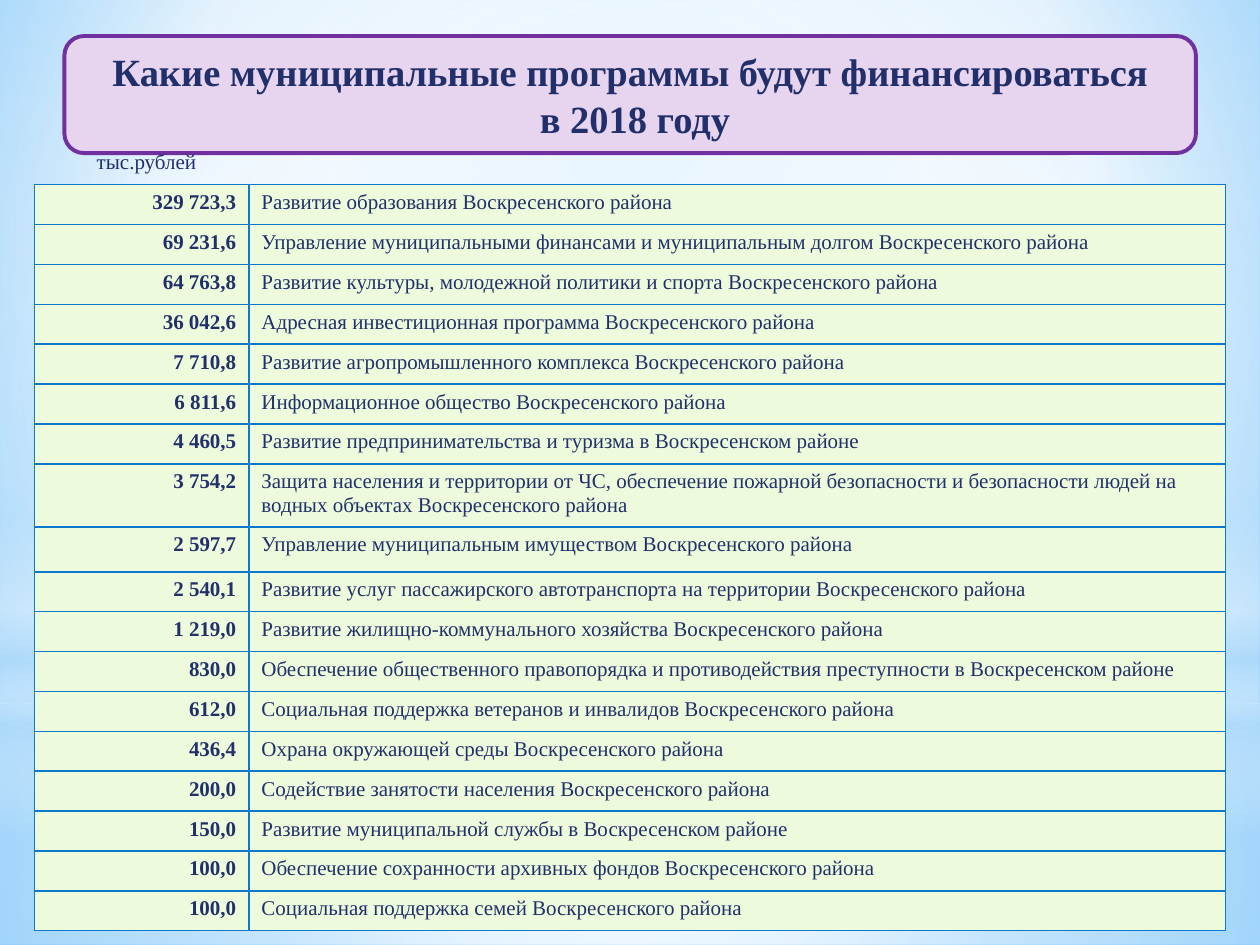
from lxml.etree import SubElement
from pptx import Presentation
from pptx.dml.color import RGBColor
from pptx.enum.shapes import MSO_SHAPE
from pptx.enum.text import MSO_ANCHOR, PP_ALIGN
from pptx.oxml.ns import qn
from pptx.util import Pt

NAVY = RGBColor(0x21, 0x30, 0x6A)
PURPLE = RGBColor(0x70, 0x30, 0xA0)
LILAC = RGBColor(0xE7, 0xD5, 0xEF)
PALE_GREEN = RGBColor(0xED, 0xFB, 0xDC)
BORDER_BLUE = RGBColor(0x0D, 0x79, 0xCA)
WHITE = RGBColor(0xFF, 0xFF, 0xFF)
MIST = RGBColor(0xB4, 0xDC, 0xFA)
SKY = RGBColor(0x9E, 0xD5, 0xFF)
DEEP_SKY = RGBColor(0x5B, 0xB9, 0xFF)

FONT = "Times New Roman"
WIDTH, HEIGHT = 720, 540
CENTRE = (50, 50, 50, 50)
ROW_HEIGHT = 22.8
SPECIAL_ROW_HEIGHTS = {7: 36, 8: 25.7}

PROGRAMMES = [
    ("329 723,3", "Развитие образования Воскресенского района"),
    ("69 231,6", "Управление муниципальными финансами и муниципальным долгом Воскресенского района"),
    ("64 763,8", "Развитие культуры, молодежной политики и спорта Воскресенского района"),
    ("36 042,6", "Адресная инвестиционная программа Воскресенского района"),
    ("7 710,8", "Развитие агропромышленного комплекса Воскресенского района"),
    ("6 811,6", "Информационное общество Воскресенского района"),
    ("4 460,5", "Развитие предпринимательства и туризма в Воскресенском районе"),
    ("3 754,2", "Защита населения и территории от ЧС, обеспечение пожарной безопасности "
                "и безопасности людей на водных объектах Воскресенского района"),
    ("2 597,7", "Управление муниципальным имуществом Воскресенского района"),
    ("2 540,1", "Развитие услуг пассажирского автотранспорта на территории Воскресенского района"),
    ("1 219,0", "Развитие жилищно-коммунального хозяйства Воскресенского района"),
    ("830,0", "Обеспечение общественного правопорядка и противодействия преступности в Воскресенском районе"),
    ("612,0", "Социальная поддержка ветеранов и инвалидов Воскресенского района"),
    ("436,4", "Охрана окружающей среды Воскресенского района"),
    ("200,0", "Содействие занятости населения Воскресенского района"),
    ("150,0", "Развитие муниципальной службы в Воскресенском районе"),
    ("100,0", "Обеспечение сохранности архивных фондов Воскресенского района"),
    ("100,0", "Социальная поддержка семей Воскресенского района"),
]


def write_text(frame, text, size=12, bold=False, align=PP_ALIGN.LEFT):
    """Write one paragraph for each line of text."""
    frame.word_wrap = True
    for index, line in enumerate(text.split("\n")):
        paragraph = frame.add_paragraph() if index else frame.paragraphs[0]
        paragraph.alignment = align
        run = paragraph.add_run()
        run.text = line
        run.font.name = FONT
        run.font.size = Pt(size)
        run.font.bold = bold
        run.font.color.rgb = NAVY


def apply_gradient(properties, stops, focus=None):
    """Replace an empty fill by a gradient: circular with a focus, else top to bottom."""
    gradient = properties.makeelement(qn("a:gradFill"), {"rotWithShape": "1"})
    stop_list = SubElement(gradient, qn("a:gsLst"))
    for position, color, opacity in stops:
        stop = SubElement(stop_list, qn("a:gs"), pos=str(position * 1000))
        value = SubElement(stop, qn("a:srgbClr"), val=str(color))
        if opacity < 100:
            SubElement(value, qn("a:alpha"), val=str(opacity * 1000))
    if focus:
        circle = SubElement(gradient, qn("a:path"), {"path": "circle"})
        sides = {side: str(share * 1000) for side, share in zip("ltrb", focus)}
        SubElement(circle, qn("a:fillToRect"), sides)
    else:
        SubElement(gradient, qn("a:lin"), ang="5400000", scaled="0")
    properties.replace(properties.find(qn("a:noFill")), gradient)


def add_glow(slide, kind, box, stops, focus=None):
    shape = slide.shapes.add_shape(kind, *map(Pt, box))
    shape.shadow.inherit = False
    shape.line.fill.background()
    shape.fill.background()
    apply_gradient(shape.element.spPr, stops, focus)


def add_backdrop(slide, box):
    left, top, width, height = box
    horizon = 401.8

    # Sky
    slide.background.fill.background()
    apply_gradient(slide.element.find(".//" + qn("p:bgPr")),
                   [(0, SKY, 100), (60, WHITE, 100), (100, DEEP_SKY, 100)],
                   (20, 10, 20, 60))

    # Light below and above the horizon, haze band, central glow
    add_glow(slide, MSO_SHAPE.RECTANGLE, (left, top + horizon, width, height - horizon),
             [(0, WHITE, 91), (37, WHITE, 76), (100, MIST, 79)], CENTRE)
    add_glow(slide, MSO_SHAPE.RECTANGLE, (left, top, width, horizon),
             [(0, WHITE, 89), (48, WHITE, 62), (100, MIST, 79)], CENTRE)
    add_glow(slide, MSO_SHAPE.RECTANGLE, (left, top + 296.6, width, 180),
             [(0, WHITE, 0), (29, WHITE, 30), (45, MIST, 40),
              (55, WHITE, 26), (65, MIST, 60), (100, WHITE, 0)])
    add_glow(slide, MSO_SHAPE.OVAL, (left, top + 126, width, horizon),
             [(0, WHITE, 100), (56, WHITE, 0)], CENTRE)


def add_title(slide, box):
    shape = slide.shapes.add_shape(MSO_SHAPE.ROUNDED_RECTANGLE, *map(Pt, box))
    shape.shadow.inherit = False
    shape.fill.solid()
    shape.fill.fore_color.rgb = LILAC
    shape.line.color.rgb = PURPLE
    shape.line.width = Pt(2.25)
    shape.text_frame.vertical_anchor = MSO_ANCHOR.MIDDLE
    write_text(shape.text_frame,
               "Какие муниципальные программы будут финансироваться\n в 2018 году",
               size=22, bold=True, align=PP_ALIGN.CENTER)


def add_borders(cell):
    properties = cell._tc.get_or_add_tcPr()
    for index, side in enumerate(("lnL", "lnR", "lnT", "lnB")):
        line = properties.makeelement(qn("a:" + side), {"w": str(Pt(1))})
        fill = SubElement(line, qn("a:solidFill"))
        SubElement(fill, qn("a:srgbClr"), val=str(BORDER_BLUE))
        properties.insert(index, line)


def add_programme_table(slide, box):
    table = slide.shapes.add_table(len(PROGRAMMES), 2, *map(Pt, box)).table
    table.first_row = False
    table.horz_banding = False
    amount_width = 122.4
    table.columns[0].width = Pt(amount_width)
    table.columns[1].width = Pt(box[2] - amount_width)

    for index, (amount, name) in enumerate(PROGRAMMES):
        table.rows[index].height = Pt(SPECIAL_ROW_HEIGHTS.get(index, ROW_HEIGHT))
        amount_cell, name_cell = table.rows[index].cells
        write_text(amount_cell.text_frame, amount, bold=True, align=PP_ALIGN.RIGHT)
        write_text(name_cell.text_frame, name)
        for cell in (amount_cell, name_cell):
            cell.fill.solid()
            cell.fill.fore_color.rgb = PALE_GREEN
            add_borders(cell)


def add_unit_label(slide, box):
    label = slide.shapes.add_textbox(*map(Pt, box))
    write_text(label.text_frame, "тыс.рублей")


def main():
    presentation = Presentation()
    presentation.slide_width = Pt(WIDTH)
    presentation.slide_height = Pt(HEIGHT)
    slide = presentation.slides.add_slide(presentation.slide_layouts[6])

    add_backdrop(slide, (0, 0, WIDTH, HEIGHT))
    add_title(slide, (36.8, 20.6, 646.6, 66.9))
    add_programme_table(slide, (19.8, 105.5, 680.4, 426.5))
    add_unit_label(slide, (48.2, 81.4, 646.6, 21.6))

    presentation.save("out.pptx")


if __name__ == "__main__":
    main()
